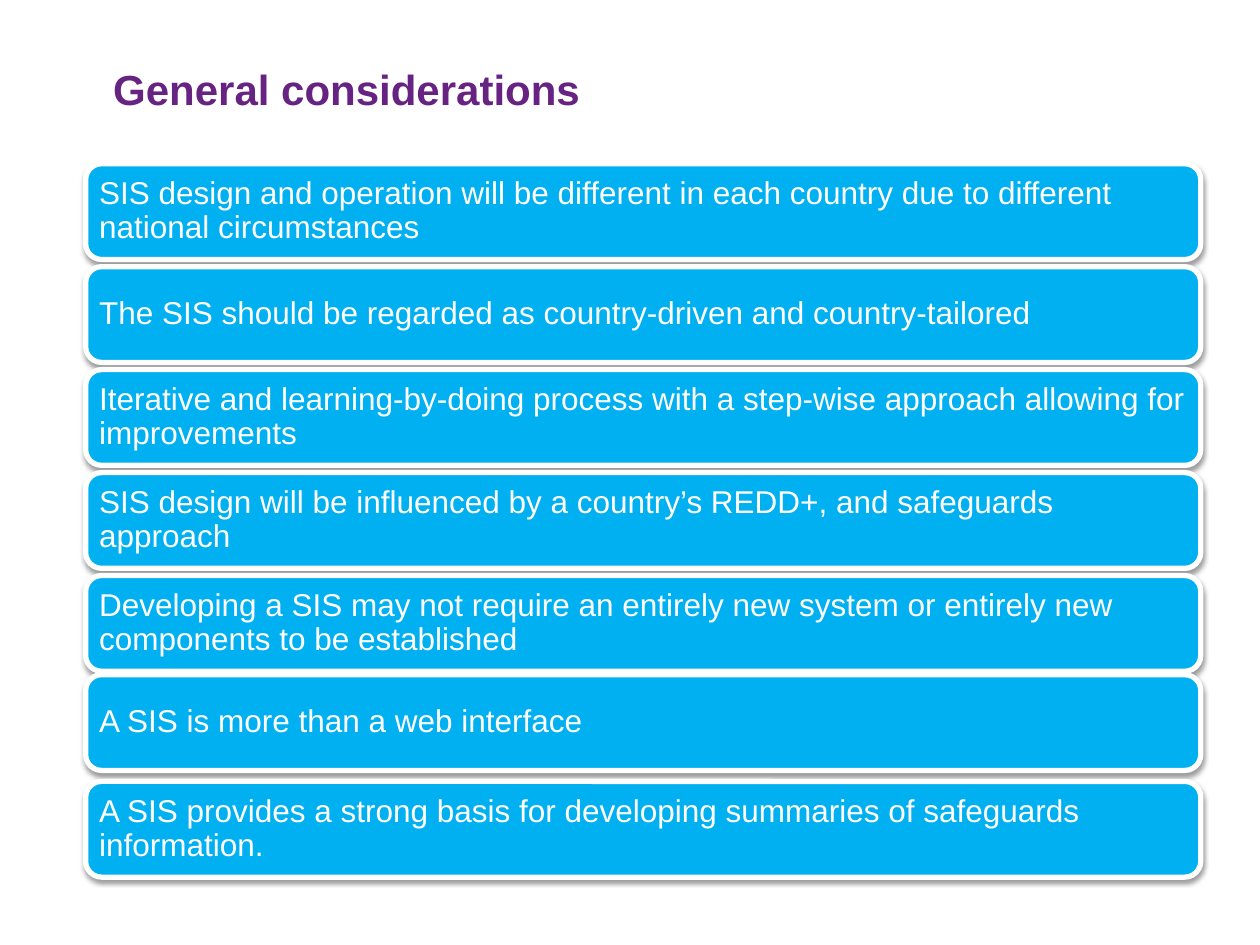
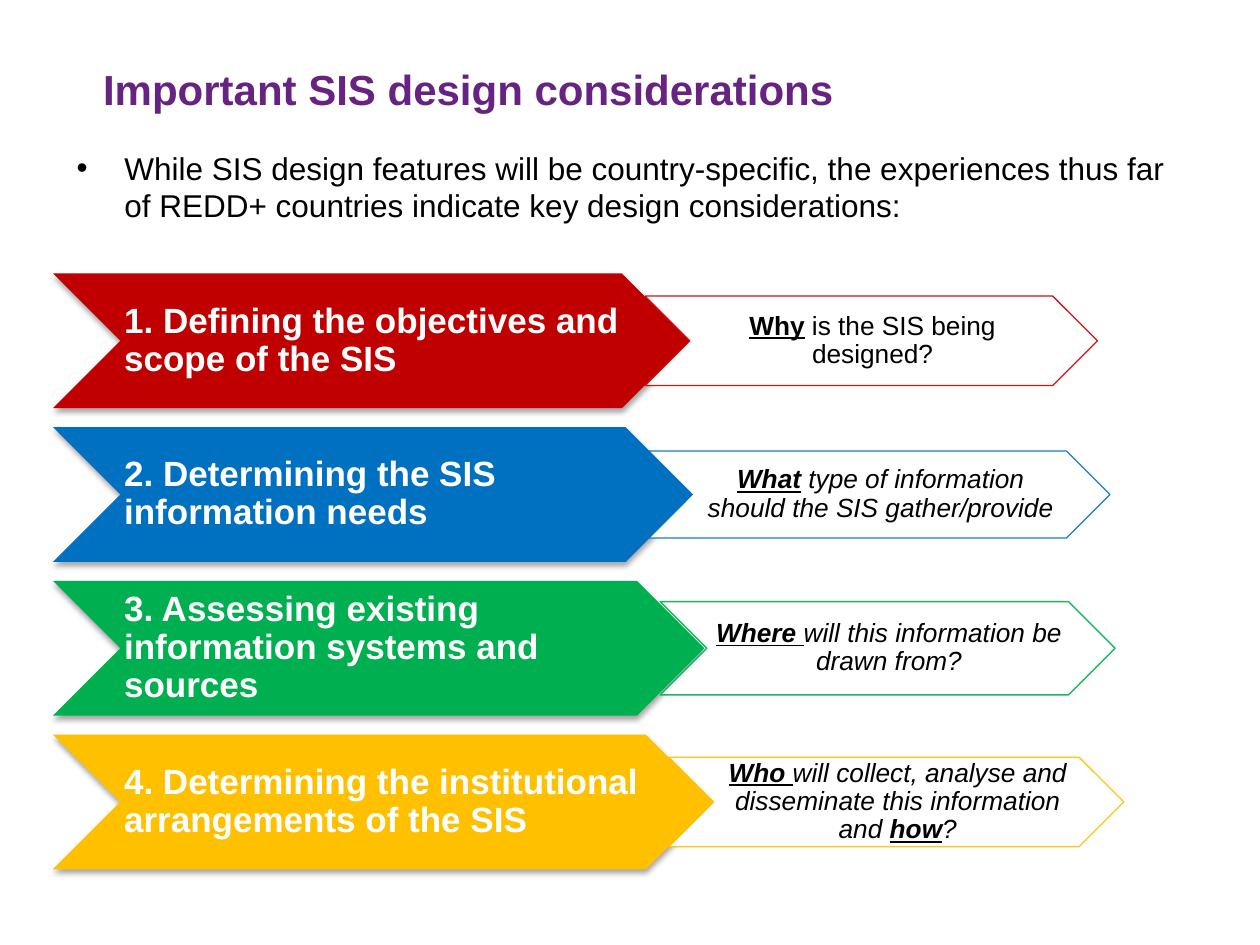
import pptx
import pptx.util
import pptx.dml.color
import pptx.enum.shapes
import pptx.enum.text
import pptx.oxml
import pptx.oxml.ns
from dataclasses import dataclass

SHAPES = pptx.enum.shapes.MSO_SHAPE
ALIGN = pptx.enum.text.PP_ALIGN
ANCHOR = pptx.enum.text.MSO_ANCHOR
COLUMNS, ROWS = 100, 75


@dataclass(frozen=True)
class Theme:
    font: str = "Arial"
    purple: str = "662382"
    sky: str = "00B0F0"
    red: str = "C00000"
    blue: str = "0070C0"
    green: str = "00B050"
    amber: str = "FFC000"
    white: str = "FFFFFF"
    black: str = "000000"
    title_size: int = 24
    step_size: int = 20
    body_size: int = 18
    question_size: int = 15


THEME = Theme()

CONSIDERATIONS = [
    ("SIS design and operation will be different in each country due to different national circumstances", 0),
    ("The SIS should be regarded as country-driven and country-tailored", 0),
    ("Iterative and learning-by-doing process with a step-wise approach allowing for improvements", 0),
    ("SIS design will be influenced by a country’s REDD+, and safeguards approach", 0),
    ("Developing a SIS may not require an entirely new system or entirely new components to be established", 0),
    ("A SIS is more than a web interface", -0.3),
    ("A SIS provides a strong basis for developing summaries of safeguards information.", 0),
]

STEPS = [
    dict(color=THEME.red, width=50.5, name="1. Defining the objectives and scope of the SIS",
         question=[("Why", True), (" is the SIS being designed?", False)],
         size=(35.9, 7.1), italic=False),
    dict(color=THEME.blue, width=50.8, name="2. Determining the SIS information needs",
         question=[("What", True), (" type of information should the SIS gather/provide", False)],
         size=(36.6, 6.9), italic=True),
    dict(color=THEME.green, width=51.7, name="3. Assessing existing information systems and sources",
         question=[("Where ", True), ("will this information be drawn from?", False)],
         size=(36.1, 7.4), italic=True),
    dict(color=THEME.amber, width=52.4, name="4. Determining the institutional arrangements of the SIS",
         question=[("Who ", True), ("will collect, analyse and disseminate this information and ", False),
                   ("how", True), ("?", False)],
         size=(36.1, 7.1), italic=True),
]


def rgb(color):
    return pptx.dml.color.RGBColor.from_string(color)


def grid(deck, left, top, width, height):
    column, row = deck.slide_width / COLUMNS, deck.slide_height / ROWS
    return [round(n) for n in (left * column, top * row, width * column, height * row)]


def add_xml(parent, tag, **attributes):
    child = pptx.oxml.parse_xml(f"<{tag} {pptx.oxml.ns.nsdecls('a')}/>")
    for name, value in attributes.items():
        child.set(name, str(value))
    parent.append(child)
    return child


def write(box, text, size, color, bold=False, italic=False, align=ALIGN.LEFT,
          anchor=ANCHOR.TOP, insets=(0.1, 0.05, 0.1, 0.05), spacing=1.0, bullet=False):
    frame = box.text_frame
    frame.word_wrap = True
    frame.vertical_anchor = anchor
    (frame.margin_left, frame.margin_top,
     frame.margin_right, frame.margin_bottom) = map(pptx.util.Inches, insets)
    para = frame.paragraphs[0]
    para.alignment = align
    para.line_spacing = spacing
    if bullet:
        properties = para._p.get_or_add_pPr()
        indent = pptx.util.Inches(0.38)
        properties.set("marL", str(indent))
        properties.set("indent", str(-indent))
        add_xml(properties, "a:buFont", typeface=THEME.font)
        add_xml(properties, "a:buChar", char="•")
    spans = [(text, False)] if isinstance(text, str) else text
    for words, stressed in spans:
        span = para.add_run()
        span.text = words
        span.font.name = THEME.font
        span.font.size = pptx.util.Pt(size)
        span.font.color.rgb = rgb(color)
        span.font.bold = bold or stressed
        span.font.italic = italic
        span.font.underline = stressed


def add_label(deck, page, area, text, **style):
    write(page.shapes.add_textbox(*grid(deck, *area)), text, **style)


def add_title(deck, page, text, left, width):
    add_label(deck, page, (left, 4.1, width, 7.8), text, size=THEME.title_size,
              color=THEME.purple, bold=True, insets=(0.1, 0.09, 0.1, 0.05))


def add_block(deck, page, kind, area, fill, line=None, line_width=0, line_alpha=100):
    block = page.shapes.add_shape(kind, *grid(deck, *area))
    block.shadow.inherit = False
    block.fill.solid()
    block.fill.fore_color.rgb = rgb(fill)
    if line is None:
        block.line.fill.background()
    else:
        block.line.color.rgb = rgb(line)
        block.line.width = pptx.util.Pt(line_width)
        if line_alpha < 100:
            ink = block.line._ln.find(".//" + pptx.oxml.ns.qn("a:srgbClr"))
            add_xml(ink, "a:alpha", val=line_alpha * 1000)
    return block


def add_shadow(block, distance, alpha):
    effects = block._element.spPr.find(pptx.oxml.ns.qn("a:effectLst"))
    shadow = add_xml(effects, "a:outerShdw", blurRad=pptx.util.Pt(3.1),
                     dist=pptx.util.Pt(distance), dir=5400000, rotWithShape=0)
    add_xml(add_xml(shadow, "a:srgbClr", val=THEME.black), "a:alpha", val=alpha * 1000)


def add_bar(deck, page, top, text):
    bar = add_block(deck, page, SHAPES.ROUNDED_RECTANGLE, (6.8, top, 88.5, 7.6),
                    THEME.sky, THEME.white, 3)
    add_shadow(bar, 1.6, 38)
    write(bar, text, THEME.body_size, THEME.white, anchor=ANCHOR.MIDDLE,
          insets=(0.07,) * 4, spacing=0.9)


def add_step(deck, page, top, step):
    left, height, overlap = 4.2, 10.7, 3.5
    arrow = add_block(deck, page, SHAPES.CHEVRON, (left, top, step["width"], height), step["color"])
    add_shadow(arrow, 1.8, 35)
    write(arrow, step["name"], THEME.step_size, THEME.white, bold=True,
          anchor=ANCHOR.MIDDLE, insets=(0.03, 0.01, 0, 0.01), spacing=0.9)
    width, depth = step["size"]
    area = (left + step["width"] - overlap, top + (height - depth) / 2, width, depth)
    answer = add_block(deck, page, SHAPES.CHEVRON, area, THEME.white, step["color"], 0.75, 90)
    write(answer, step["question"], THEME.question_size, THEME.black, italic=step["italic"],
          align=ALIGN.CENTER, anchor=ANCHOR.MIDDLE, insets=(0.02, 0.01, 0, 0.01), spacing=0.9)


def build_general(deck, page):
    add_title(deck, page, "General considerations", 8, 86.1)
    for row, (text, nudge) in enumerate(CONSIDERATIONS):
        add_bar(deck, page, 13 + row * 8.17 + nudge, text)


def build_design(deck, page):
    add_title(deck, page, "Important SIS design considerations", 7.2, 70.3)
    add_label(deck, page, (5.1, 11.1, 90.4, 7.9),
              "While SIS design features will be country-specific, the experiences thus far "
              "of REDD+ countries indicate key design considerations:",
              size=THEME.body_size, color=THEME.black, bullet=True,
              insets=(0.1, 0.07, 0.1, 0.05))
    for row, step in enumerate(STEPS):
        add_step(deck, page, 21.7 + row * 12.2, step)


def main():
    deck = pptx.Presentation()
    deck.slide_width = pptx.util.Inches(10)
    deck.slide_height = pptx.util.Inches(7.5)
    for build in (build_general, build_design):
        build(deck, deck.slides.add_slide(deck.slide_layouts[6]))
    deck.save("out.pptx")


if __name__ == "__main__":
    main()
